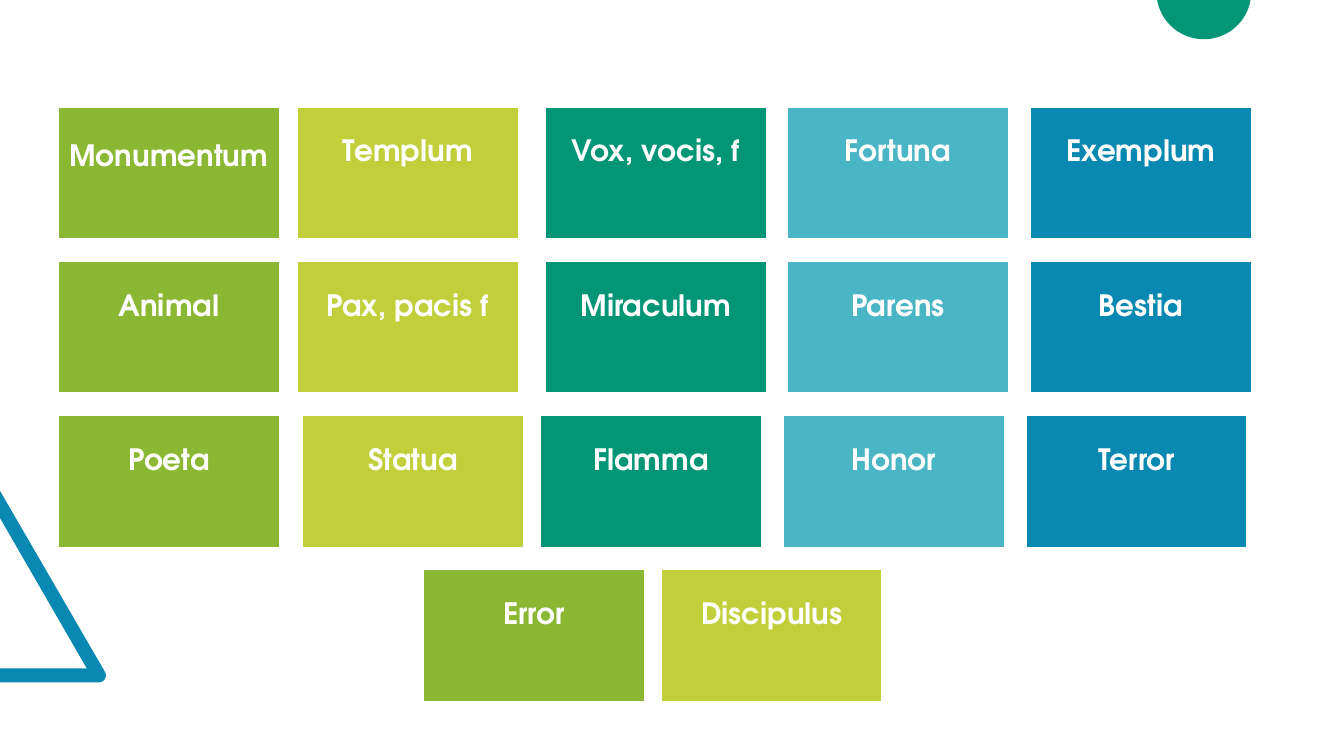
import math

import pptx
import pptx.dml.color
import pptx.enum.shapes
import pptx.enum.text
import pptx.util

Inches = pptx.util.Inches
Pt = pptx.util.Pt

COLORS = {
    "green": "8AB833",
    "lime": "C0CF3A",
    "teal": "029676",
    "aqua": "4AB5C4",
    "blue": "0989B1",
    "white": "FFFFFF",
}
HUES = ["green", "lime", "teal", "aqua", "blue"]
WIDE = [0.58, 2.95, 5.41, 7.81, 10.22]
ROWS = [
    (WIDE, ["Monumentum", "Templum", "Vox, vocis, f", "Fortuna", "Exemplum"]),
    (WIDE, ["Animal", "Pax, pacis f", "Miraculum", "Parens", "Bestia"]),
    ([0.58, 3, 5.36, 7.77, 10.18],
     ["Poeta", "Statua", "Flamma", "Honor", "Terror"]),
    ([4.2, 6.56], ["Error", "Discipulus"]),
]
TOP, STEP = 1.06, 1.53


def arc(x, y, radius, start, end, steps=40):
    """Points on a circle, clockwise from start to end in degrees."""
    turns = [math.radians(start + (end - start) * i / steps)
             for i in range(steps + 1)]
    return [(x + radius * math.cos(t), y + radius * math.sin(t)) for t in turns]


class Deck:
    font = "TeX Gyre Adventor"
    size = 21
    card_size = (2.19, 1.31)

    def __init__(self):
        self.show = pptx.Presentation()
        self.show.slide_width = Inches(13.33)
        self.show.slide_height = Inches(7.5)
        self.slide = self.show.slides.add_slide(self.show.slide_layouts[6])

    def color(self, name):
        return pptx.dml.color.RGBColor.from_string(COLORS[name])

    def paint(self, shape, hue):
        shape.shadow.inherit = False
        shape.fill.solid()
        shape.fill.fore_color.rgb = self.color(hue)

    def outline(self, points, hue):
        pen = self.slide.shapes.build_freeform(
            *map(Inches, points[0]), scale=1.0)
        pen.add_line_segments([tuple(map(Inches, p)) for p in points[1:]])
        shape = pen.convert_to_shape()
        self.paint(shape, hue)
        shape.line.fill.background()

    def card(self, left, top, word, hue, lift):
        """Draw a filled card whose word stands at lift above its foot."""
        shape = self.slide.shapes.add_shape(
            pptx.enum.shapes.MSO_SHAPE.RECTANGLE,
            Inches(left), Inches(top), *map(Inches, self.card_size))
        self.paint(shape, hue)
        shape.line.color.rgb = self.color("white")
        shape.line.width = Pt(1)
        frame = shape.text_frame
        frame.word_wrap = True
        frame.vertical_anchor = pptx.enum.text.MSO_ANCHOR.BOTTOM
        frame.margin_left = frame.margin_right = frame.margin_top = Inches(0.09)
        frame.margin_bottom = Inches(lift)
        para = frame.paragraphs[0]
        para.text = word
        para.alignment = pptx.enum.text.PP_ALIGN.CENTER
        para.line_spacing = 0.9
        para.font.name = self.font
        para.font.size = Pt(self.size)
        para.font.bold = True
        para.font.color.rgb = self.color("white")


def main():
    deck = Deck()
    tip = arc(0.98, 6.7, 0.07, -30, 90, 12)
    deck.outline([(0, 4.87), *tip, (0, 6.77), (0, 6.63), (0.86, 6.63),
                  (0, 5.14)], "blue")
    deck.outline(arc(11.94, -0.08, 0.47, 10, 170), "teal")
    for row, (lefts, words) in enumerate(ROWS):
        for left, word, hue in zip(lefts, words, HUES):
            lift = 0.65 if word == "Monumentum" else 0.7
            deck.card(left, TOP + STEP * row, word, hue, lift)
    deck.show.save("out.pptx")


if __name__ == "__main__":
    main()
